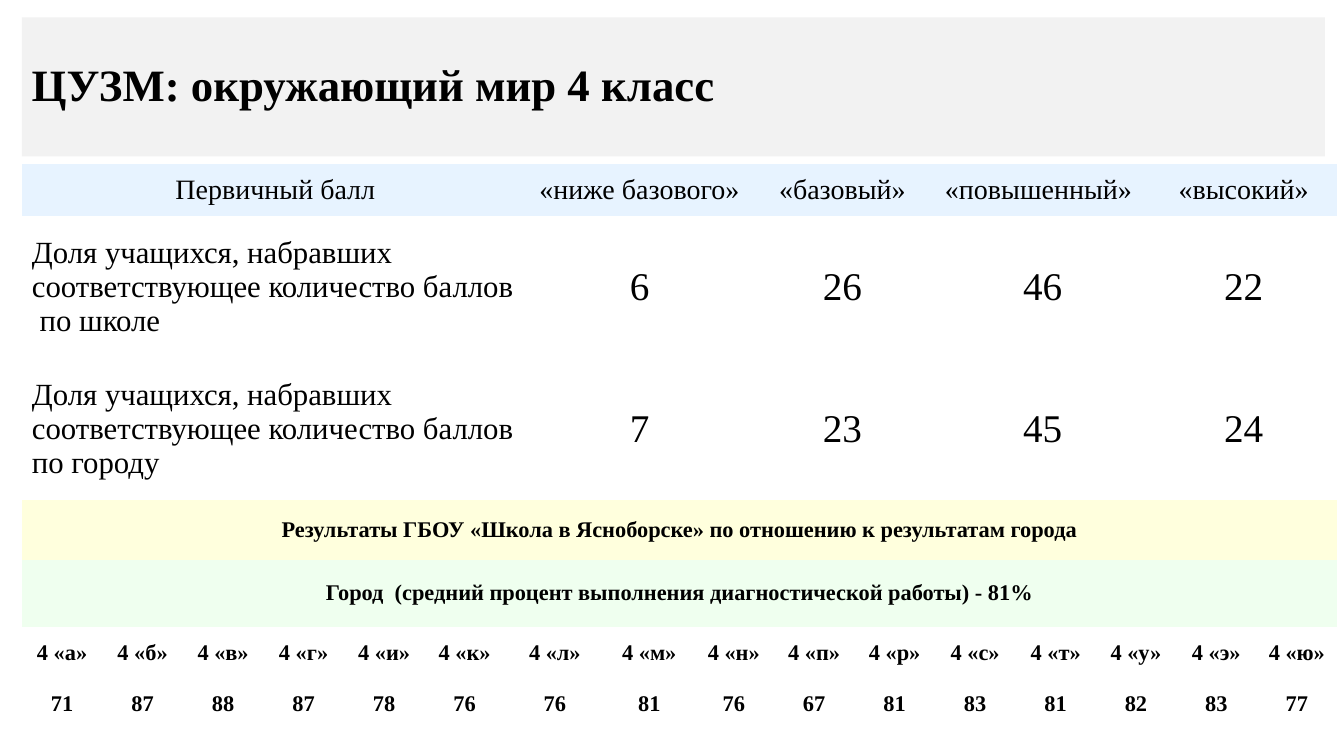
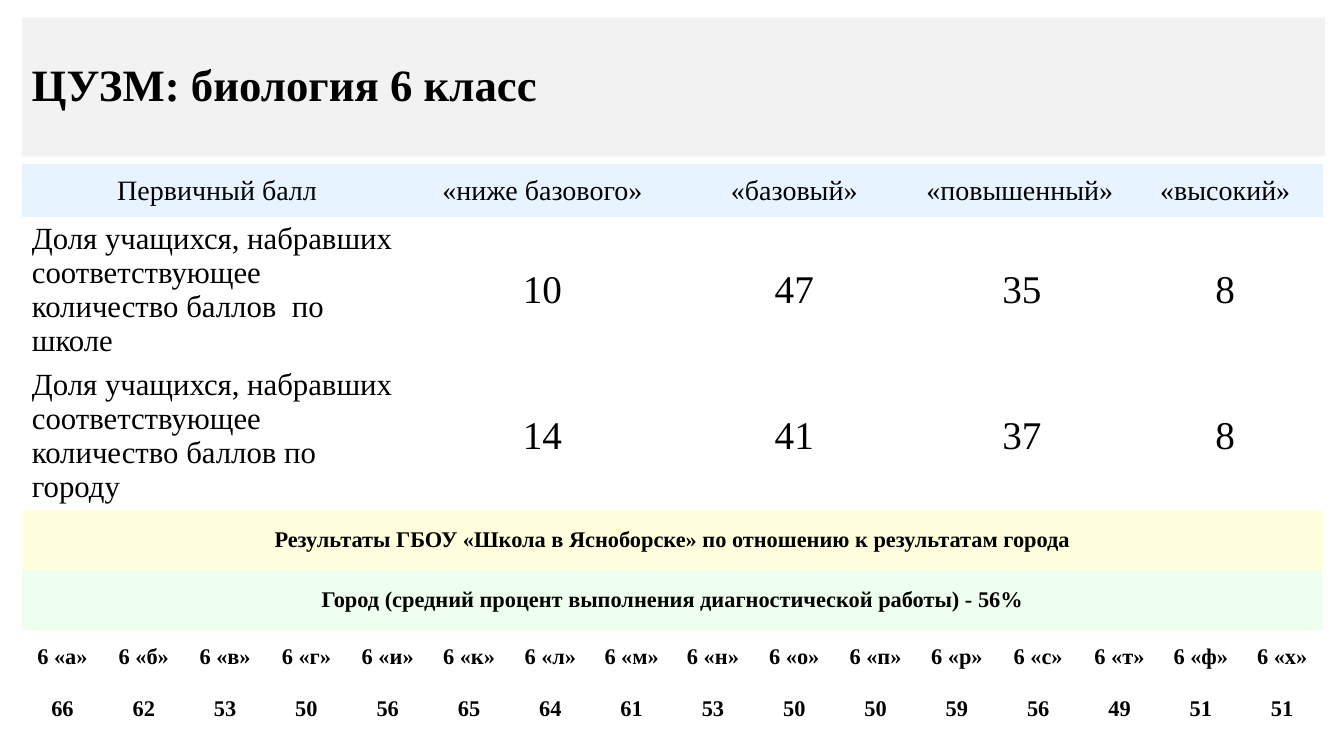
from pptx import Presentation
from pptx.dml.color import RGBColor
from pptx.enum.shapes import MSO_SHAPE as Shape
from pptx.enum.text import MSO_ANCHOR as Anchor, PP_ALIGN as Align
from pptx.util import Cm, Pt

# Shared style
FONT = "Times New Roman"
BLACK, WHITE, GREY = "000000", "FFFFFF", "F2F2F2"
BLUE, YELLOW, GREEN = "E7F3FF", "FFFFDD", "EFFFEF"
LEFT, WIDTH = 0.55, 32.84
TITLE_TOP, TITLE_HEIGHT, TABLE_TOP = 0.44, 3.5, 4.14
PLAIN_TABLE = "{2D5ABB26-0587-4C30-8999-92F81FD0307C}"

# Shared wording
LEVELS = ["Первичный балл", "«ниже базового»", "«базовый»", "«повышенный»", "«высокий»"]
SHARE = "Доля учащихся, набравших соответствующее количество баллов"
SCHOOL_SHARE, CITY_SHARE = SHARE + "  по школе", SHARE + " по городу"
RESULTS = "Результаты ГБОУ «Школа в Ясноборске» по отношению к результатам города"

# Slides: widths and heights in cm; spans count table columns
SLIDES = [
    {
        "title": "ЦУЗМ: окружающий мир 4 класс",
        "columns": [2.03] * 6 + [0.33, 1.91, 2.24, 1.42, 0.6]
                   + [2.03] * 4 + [1.37, 0.65] + [2.03] * 2,
        "rows": [1.3, 3.58, 3.58, 1.5, 1.7, 1.3, 1.3],
        "level_spans": [7, 3, 3, 3, 3],
        "double_classes": "лну",
        "school": [6, 26, 46, 22],
        "city": [7, 23, 45, 24],
        "average": "Город  (средний процент выполнения диагностической работы) - 81%",
        "grade": 4,
        "classes": "абвгиклмнпрстуэю",
        "scores": [71, 87, 88, 87, 78, 76, 76, 81, 76, 67, 81, 83, 81, 82, 83, 77],
    },
    {
        "title": "ЦУЗМ: биология 6 класс",
        "columns": [2.05] * 4 + [1.65, 0.4] + [2.05] * 8 + [1.23, 0.82] + [2.05] * 2,
        "rows": [1.32, 3.63, 3.63, 1.52, 1.52, 1.32, 1.32],
        "level_spans": [5, 4, 3, 3, 3],
        "double_classes": "ит",
        "school": [10, 47, 35, 8],
        "city": [14, 41, 37, 8],
        "average": "Город (средний процент выполнения диагностической работы) - 56%",
        "grade": 6,
        "classes": "абвгиклмнопрстфх",
        "scores": [66, 62, 53, 50, 56, 65, 64, 61, 53, 50, 50, 59, 56, 49, 51, 51],
    },
]


def color(value):
    return RGBColor.from_string(value)


def fill(target, value):
    target.fill.solid()
    target.fill.fore_color.rgb = color(value)


def write(frame, text, size, bold=False, align=Align.CENTER):
    para = frame.paragraphs[0]
    para.text = str(text)
    para.alignment = align
    font = para.font
    font.name, font.size, font.bold = FONT, Pt(size), bold
    font.color.rgb = color(BLACK)
    return para


def add_title(page, text):
    band = page.shapes.add_shape(
        Shape.RECTANGLE, Cm(LEFT), Cm(TITLE_TOP), Cm(WIDTH), Cm(TITLE_HEIGHT))
    band.shadow.inherit = False
    fill(band, GREY)
    band.line.fill.background()
    band.text_frame.word_wrap = True
    band.text_frame.vertical_anchor = Anchor.MIDDLE
    write(band.text_frame, text, 32, True, Align.LEFT).line_spacing = 0.9


def add_row(table, row, texts, spans, sizes, background=WHITE, bold=False, left=None):
    """Fill one row; left is the index of the left-aligned entry."""
    start = 0
    for index, (text, span, size) in enumerate(zip(texts, spans, sizes)):
        cell = table.cell(row, start)
        if span > 1:
            cell.merge(table.cell(row, start + span - 1))
        fill(cell, background)
        cell.vertical_anchor = Anchor.MIDDLE
        align = Align.LEFT if index == left else Align.CENTER
        write(cell.text_frame, text, size, bold, align)
        start += span


def add_results(page, data):
    columns, rows = data["columns"], data["rows"]
    table = page.shapes.add_table(
        len(rows), len(columns), Cm(LEFT), Cm(TABLE_TOP),
        Cm(sum(columns)), Cm(sum(rows))).table
    table.first_row = table.horz_banding = False
    table._tbl.tblPr[0].text = PLAIN_TABLE
    for column, width in zip(table.columns, columns):
        column.width = Cm(width)
    for row, height in zip(table.rows, rows):
        row.height = Cm(height)

    # Levels and shares
    spans = data["level_spans"]
    add_row(table, 0, LEVELS, spans, [20] * 5, BLUE, left=3)
    shares = [[SCHOOL_SHARE] + data["school"], [CITY_SHARE] + data["city"]]
    for row, texts in enumerate(shares, 1):
        add_row(table, row, texts, spans, [22] + [28] * 4, left=0)

    # Full-width bands
    add_row(table, 3, [RESULTS], [len(columns)], [16], YELLOW, True)
    add_row(table, 4, [data["average"]], [len(columns)], [16], GREEN, True)

    # Classes and their scores
    letters = data["classes"]
    names = [f"{data['grade']} «{letter}»" for letter in letters]
    spans = [2 if letter in data["double_classes"] else 1 for letter in letters]
    for row, texts in enumerate([names, data["scores"]], 5):
        add_row(table, row, texts, spans, [16] * len(letters), bold=True)


def main():
    deck = Presentation()
    deck.slide_width, deck.slide_height = Cm(33.87), Cm(19.05)
    for data in SLIDES:
        page = deck.slides.add_slide(deck.slide_layouts[6])
        add_title(page, data["title"])
        add_results(page, data)
    deck.save("out.pptx")


if __name__ == "__main__":
    main()
